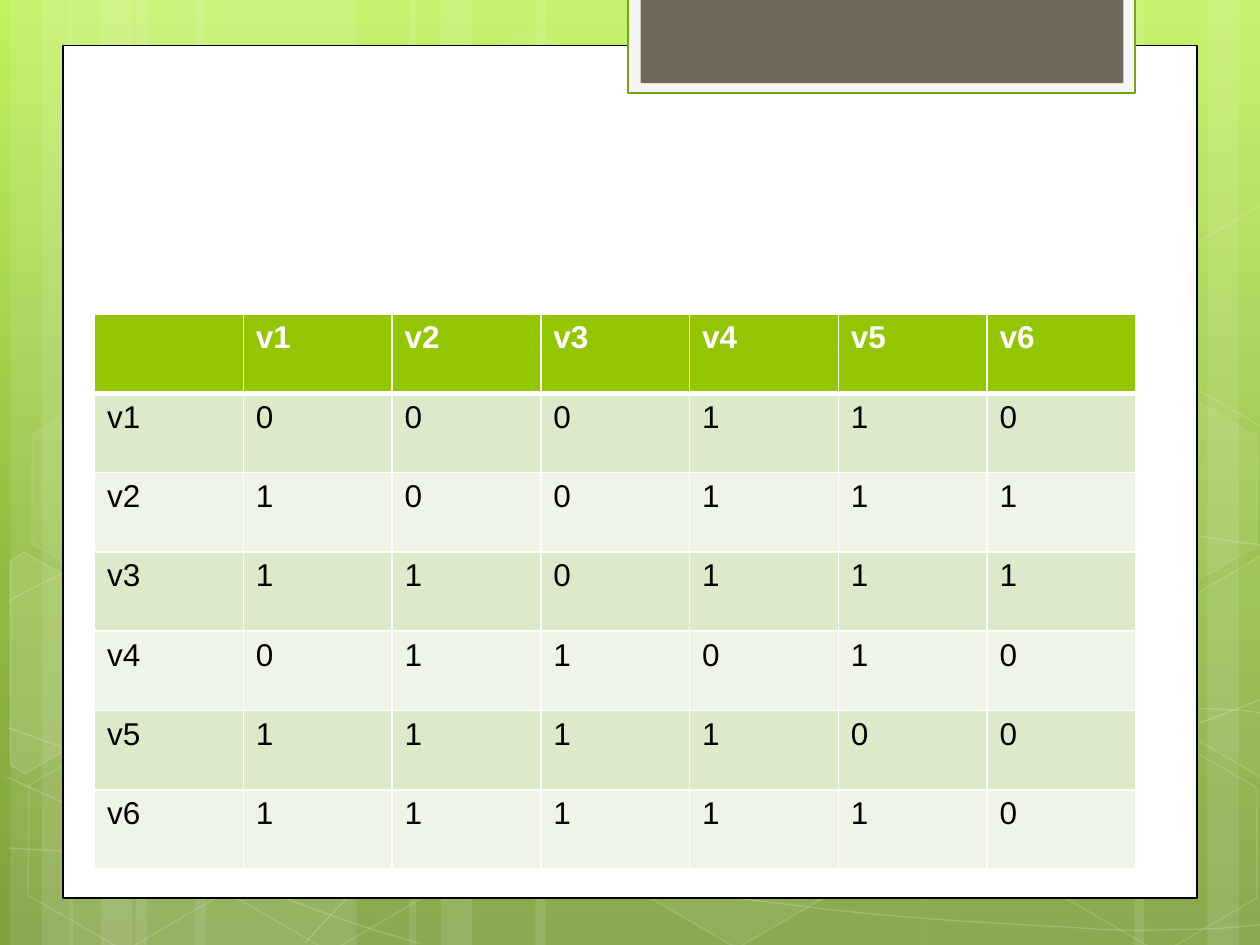
from copy import deepcopy
from math import cos, radians, sin

from lxml.etree import SubElement
from pptx import Presentation
from pptx.dml.color import RGBColor
from pptx.enum.shapes import MSO_SHAPE as Shape
from pptx.oxml.ns import qn
from pptx.util import Pt

WHITE, BLACK = "FFFFFF", "000000"
TILT = 30
GRADIENT = [(0, "C1F15E"), (0.62, "90BA3F"), (1, "7FA03E")]

BANDS = [(77.8, 126), (6, 36), (24, 60), (111.6, 126), (39.6, 36), (57.6, 60),
         (527.8, 126), (690, 36), (648, 60), (306, 222), (234, 36), (252, 60)]

CURVES = [
    [(5, 484.6), (44, 487), (83, 489), (137, 488), (191, 487), (258, 486), (330, 479),
     (402, 472), (504, 458), (570, 444), (636, 431), (703, 409), (725, 397)],
    [(5, 343.4), (26, 332), (47, 321), (87, 310), (128, 300), (186, 284), (250, 279),
     (314, 274), (392, 273), (471, 279), (550, 284), (682, 307), (725, 312)],
    [(4, 444), (91, 484), (178, 523), (240, 539)],
    [(5, 416), (27, 424), (50, 432), (92, 444), (134, 454), (197, 472), (257, 485),
     (317, 497), (392, 510), (452, 517), (512, 525), (576, 528), (614, 530),
     (652, 533), (662, 531), (680, 531), (699, 531), (712, 529), (725, 528)],
    [(174, 539), (187, 525), (200, 510), (217, 498), (235, 485), (259, 470), (279, 460),
     (300, 450), (312, 446), (338, 438), (364, 431), (413, 421), (438, 416),
     (464, 411), (467, 411), (490, 410), (512, 408), (547, 405), (572, 405),
     (597, 404), (638, 405), (638, 405), (654, 405), (670, 405), (686, 405),
     (699, 405), (711, 406), (718, 407), (724, 408), (722, 407), (724, 408)],
]

HEXAGONS = [(240.5, 26, 4, 8), (358, 424, 6, 12), (8, 425.5, None, 12),
            (10, 224.6, 7, 8), (125.3, 426, None, 12), (542, 326, 10, 12),
            (600.5, 427, None, 12), (600.5, 226, 7, 8)]

LEFT_HEXAGON = [(5.8, 320.4), (13.7, 315.4), (69, 347), (68.4, 410.4), (14.4, 442), (5.8, 437)]
RIGHT_HEXAGON = [(666.7, 349.2), (720.7, 317.5), (726.5, 321),
                 (726.5, 441.4), (721.4, 444.2), (666.7, 412.6)]
UPPER_RIGHT_HEXAGON = [(x, y - 200.5) for x, y in RIGHT_HEXAGON]

VERTICES = ["v1", "v2", "v3", "v4", "v5", "v6"]
ADJACENCY = ["000110", "100111", "110111", "011010", "111100", "111110"]


def rgb(color):
    return RGBColor.from_string(color)


def turn(points, center, degrees):
    cx, cy = center
    c, n = cos(radians(degrees)), sin(radians(degrees))
    return [(cx + (x - cx) * c - (y - cy) * n, cy + (x - cx) * n + (y - cy) * c)
            for x, y in points]


class SlideBuilder:
    font = {"name": "Arial", "size": Pt(18)}
    header = {"fill": "94C600", "color": WHITE, "bold": True}
    body = [{"fill": "DCEACA", "color": BLACK, "bold": False},
            {"fill": "EEF5E6", "color": BLACK, "bold": False}]

    def __init__(self, s):
        self.s = s

    def background(self, stops):
        fill = self.s.background.fill
        fill.gradient()
        fill.gradient_angle = 270
        gs_list = self.s.element.find(".//" + qn("a:gsLst"))
        gs_list.append(deepcopy(gs_list[-1]))
        for stop, (position, color) in zip(fill.gradient_stops, stops):
            stop.position = position
            stop.color.rgb = rgb(color)

    def paint(self, fill, parent, color, alpha=None):
        fill.solid()
        fill.fore_color.rgb = rgb(color)
        if alpha:
            clr = parent.find(qn("a:solidFill"))[0]
            SubElement(clr, qn("a:alpha"), val=str(alpha * 1000))

    def style(self, sp, fill=None, alpha=None, line=None, width=1, line_alpha=None):
        sp.shadow.inherit = False
        spPr = sp.element.spPr
        if fill:
            self.paint(sp.fill, spPr, fill, alpha)
        else:
            sp.fill.background()
        if line:
            sp.line.width = Pt(width)
            self.paint(sp.line.fill, spPr.find(qn("a:ln")), line, line_alpha)
        else:
            sp.line.fill.background()
        return sp

    def shape(self, kind, x, y, w, h, **look):
        sp = self.s.shapes.add_shape(kind, Pt(x), Pt(y), Pt(w), Pt(h))
        return self.style(sp, **look)

    def hexagon(self, x, y, alpha, line_alpha):
        sp = self.shape(Shape.HEXAGON, x, y, 126, 109.4, fill=alpha and WHITE,
                        alpha=alpha, line=WHITE, line_alpha=line_alpha)
        sp.adjustments[0] = 0.285
        sp.rotation = TILT

    def outline(self, points, close, **look):
        start, *rest = [(Pt(x), Pt(y)) for x, y in points]
        builder = self.s.shapes.build_freeform(*start)
        builder.add_line_segments(rest, close=close)
        return self.style(builder.convert_to_shape(), line=WHITE, **look)

    def curve(self, points):
        sp = self.outline(points, False, width=0.75, line_alpha=20)
        lines = sp.element.findall(".//" + qn("a:lnTo"))
        for i in range(0, len(lines), 3):
            bezier = SubElement(lines[i].getparent(), qn("a:cubicBezTo"))
            for ln in lines[i:i + 3]:
                bezier.append(ln[0])
                ln.getparent().remove(ln)

    def cut_hexagon(self, points, center, **look):
        sp = self.outline(turn(points, center, -TILT), True, line_alpha=12, **look)
        sp.rotation = TILT

    def border(self, cell, side, width):
        tcPr = cell._tc.get_or_add_tcPr()
        ln = SubElement(tcPr, qn("a:ln" + side), w=str(Pt(width)))
        SubElement(SubElement(ln, qn("a:solidFill")), qn("a:srgbClr"), val=WHITE)

    def cell(self, cell, text, row):
        look = self.body[(row - 1) % 2] if row else self.header
        widths = {"L": 1, "R": 1, "T": 3 if row == 1 else 1, "B": 1 if row else 3}
        for side, width in widths.items():
            self.border(cell, side, width)
        self.paint(cell.fill, None, look["fill"])
        p = cell.text_frame.paragraphs[0]
        p.text = text
        for name, value in {**self.font, "bold": look["bold"]}.items():
            setattr(p.font, name, value)
        p.font.color.rgb = rgb(look["color"])

    def table(self, x, y, w, h, rows):
        tbl = self.s.shapes.add_table(len(rows), len(rows[0]), Pt(x), Pt(y), Pt(w), Pt(h)).table
        for i, row in enumerate(rows):
            for j, text in enumerate(row):
                self.cell(tbl.cell(i, j), text, i)


def main():
    prs = Presentation()
    prs.slide_width, prs.slide_height = Pt(720), Pt(540)
    b = SlideBuilder(prs.slides.add_slide(prs.slide_layouts[6]))

    b.background(GRADIENT)
    for x, w in BANDS:
        b.shape(Shape.RECTANGLE, x, 0, w, 540, fill=WHITE, alpha=10)
    for points in CURVES:
        b.curve(points)
    for hexagon in HEXAGONS:
        b.hexagon(*hexagon)
    b.cut_hexagon(LEFT_HEXAGON, (25.9, 385.2), fill=WHITE, alpha=10)
    b.cut_hexagon(RIGHT_HEXAGON, (709.2, 374.4), fill=WHITE, alpha=4)
    b.cut_hexagon(UPPER_RIGHT_HEXAGON, (709.2, 173.9))

    b.shape(Shape.RECTANGLE, 36, 26.2, 648, 487, fill=WHITE, line=BLACK, width=0.75)
    b.shape(Shape.RECTANGLE, 359, -1.5, 289.5, 54.7, fill="F5F5F5", line="74A50F", width=1.25)
    b.shape(Shape.RECTANGLE, 366, -1.5, 276, 49, fill="71685A")

    rows = [["", *VERTICES]] + [[v, *links] for v, links in zip(VERTICES, ADJACENCY)]
    b.table(54, 179.4, 595.2, 317.4, rows)
    prs.save("out.pptx")


if __name__ == "__main__":
    main()
